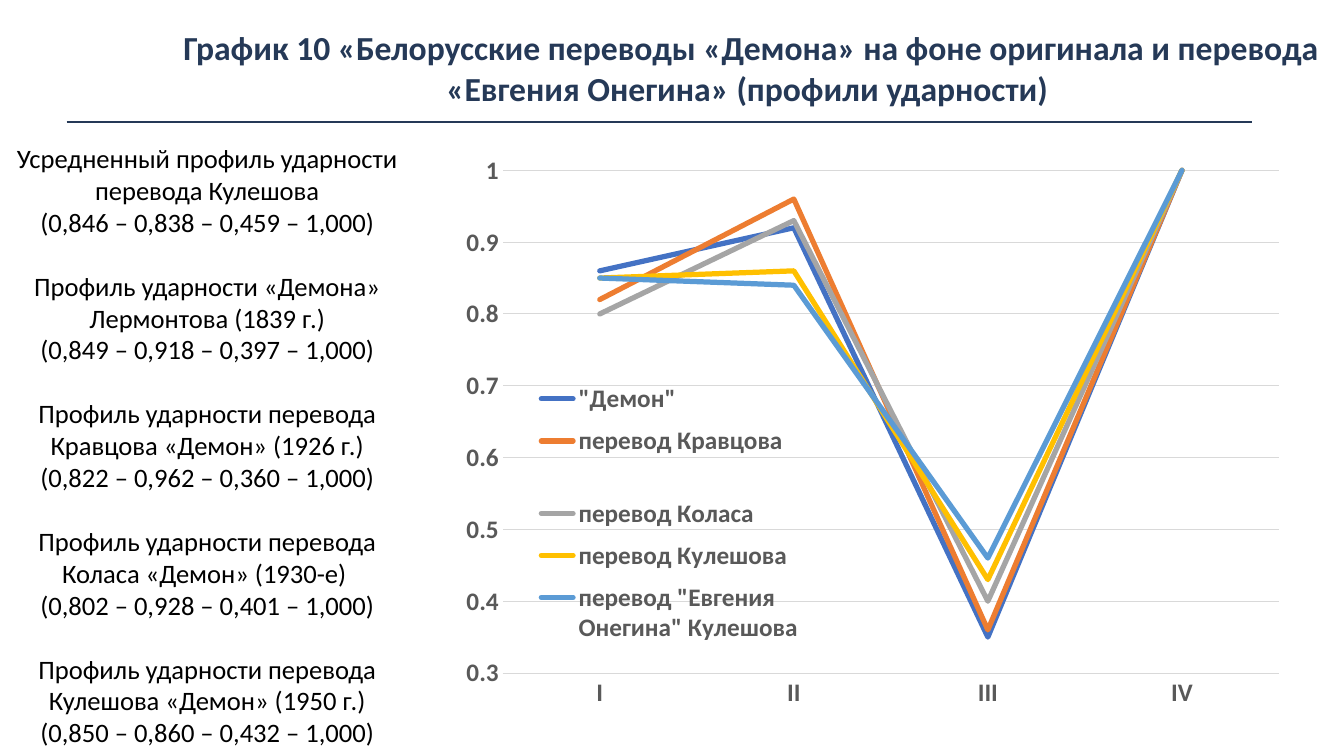
from lxml import etree
from pptx import Presentation
from pptx.chart.data import CategoryChartData
from pptx.dml.color import RGBColor
from pptx.enum.chart import XL_CHART_TYPE as ChartType
from pptx.enum.chart import XL_LEGEND_POSITION as LegendPosition
from pptx.enum.chart import XL_TICK_MARK as TickMark
from pptx.enum.shapes import MSO_CONNECTOR as Connector
from pptx.enum.text import MSO_ANCHOR as Anchor
from pptx.enum.text import MSO_AUTO_SIZE as AutoSize
from pptx.enum.text import PP_ALIGN as Align
from pptx.oxml.ns import qn
from pptx.util import Inches, Pt

FONT = "Calibri"
NAVY = "253957"
BLACK = "000000"
GRAY = "595959"
GRID = "D9D9D9"

TITLE = ("График 10 «Белорусские переводы «Демона» на фоне оригинала "
         "и перевода «Евгения Онегина» (профили ударности) ")

PROFILES = [
    ("Усредненный профиль ударности перевода Кулешова",
     "(0,846 – 0,838 – 0,459 – 1,000)"),
    ("Профиль ударности «Демона» Лермонтова (1839 г.)",
     "(0,849 – 0,918 – 0,397 – 1,000)"),
    ("Профиль ударности перевода Кравцова «Демон» (1926 г.)",
     "(0,822 – 0,962 – 0,360 – 1,000)"),
    ("Профиль ударности перевода Коласа «Демон» (1930-е) ",
     "(0,802 – 0,928 – 0,401 – 1,000)"),
    ("Профиль ударности перевода Кулешова «Демон» (1950 г.)",
     "(0,850 – 0,860 – 0,432 – 1,000)"),
]

SERIES = [
    ('"Демон"', (0.86, 0.92, 0.35, 1), "4472C4"),
    ("перевод Кравцова\n", (0.82, 0.96, 0.36, 1), "ED7D31"),
    ("перевод Коласа", (0.8, 0.93, 0.4, 1), "A5A5A5"),
    ("перевод Кулешова", (0.85, 0.86, 0.43, 1), "FFC000"),
    ('перевод "Евгения Онегина" Кулешова', (0.85, 0.84, 0.46, 1), "5B9BD5"),
]


def color(value):
    return RGBColor.from_string(value)


def apply(target, values):
    for name, value in values.items():
        setattr(target, name, value)


class SlideBuilder:
    def __init__(self, deck):
        self.page = deck.slides.add_slide(deck.slide_layouts[1])

    def style_font(self, font, size, ink, bold=False):
        apply(font, {"name": FONT, "size": Pt(size), "bold": bold})
        font.color.rgb = color(ink)

    def style_line(self, line, ink, width):
        line.color.rgb = color(ink)
        line.width = Pt(width)

    def text(self, box, place, rows, size, ink, bold, anchor, inset):
        left, top, width, height = map(Inches, place)
        apply(box, {"left": left, "top": top, "width": width, "height": height})
        frame = box.text_frame
        apply(frame, {"word_wrap": True, "auto_size": AutoSize.NONE,
                      "vertical_anchor": anchor})
        sides = ("margin_left", "margin_top", "margin_right", "margin_bottom")
        apply(frame, dict.fromkeys(sides, Inches(inset)))
        for index, (words, gap) in enumerate(rows):
            para = frame.add_paragraph() if index else frame.paragraphs[0]
            apply(para, {"alignment": Align.CENTER, "space_before": Pt(gap),
                         "space_after": Pt(0)})
            settings = para._p.get_or_add_pPr()
            settings.set("marL", "0")
            settings.set("indent", "0")
            etree.SubElement(settings, qn("a:buNone"))
            span = para.add_run()
            span.text = words
            self.style_font(span.font, size, ink, bold)

    def rule(self, left, right, top, ink, width):
        line = self.page.shapes.add_connector(
            Connector.STRAIGHT, Inches(left), Inches(top), Inches(right), Inches(top))
        self.style_line(line.line, ink, width)
        etree.SubElement(line._element.spPr, qn("a:effectLst"))

    def manual_layout(self, parent, position, place, inner=False):
        for old in parent.findall(qn("c:layout")):
            parent.remove(old)
        layout = etree.Element(qn("c:layout"))
        manual = etree.SubElement(layout, qn("c:manualLayout"))
        entries = [("layoutTarget", "inner")] if inner else []
        entries += [("xMode", "edge"), ("yMode", "edge")]
        entries += zip("xywh", map(str, place))
        for tag, value in entries:
            etree.SubElement(manual, qn(f"c:{tag}")).set("val", value)
        parent.insert(position, layout)

    def axis(self, axis):
        apply(axis, {"major_tick_mark": TickMark.NONE, "minor_tick_mark": TickMark.NONE})
        self.style_font(axis.tick_labels.font, 18, GRAY, True)

    def line_chart(self, place, categories, series):
        data = CategoryChartData()
        data.categories = categories
        for name, values, ink in series:
            data.add_series(name, values)
        chart = self.page.shapes.add_chart(
            ChartType.LINE, *map(Inches, place), data).chart
        apply(chart, {"has_title": False, "has_legend": True})
        self.style_font(chart.font, 10, BLACK)
        chart.plots[0].vary_by_categories = False
        for line, (name, values, ink) in zip(chart.plots[0].series, series):
            line.smooth = False
            self.style_line(line.format.line, ink, 3.75)
            line._element.find(f"{qn('c:spPr')}/{qn('a:ln')}").set("cap", "rnd")

        self.axis(chart.category_axis)
        self.style_line(chart.category_axis.format.line, GRID, 0.75)
        scale = chart.value_axis
        self.axis(scale)
        apply(scale, {"minimum_scale": 0.3, "maximum_scale": 1, "major_unit": 0.1,
                      "has_major_gridlines": True})
        self.style_line(scale.major_gridlines.format.line, GRID, 0.75)
        scale.format.line.fill.background()

        legend = chart.legend
        apply(legend, {"position": LegendPosition.BOTTOM, "include_in_layout": False})
        self.style_font(legend.font, 18, GRAY, True)
        self.manual_layout(legend._element, 1, (0.09, 0.35, 0.33, 0.43))
        plot_area = chart._chartSpace.chart.plotArea
        self.manual_layout(plot_area, 0, (0.065, 0.043, 0.884, 0.765), inner=True)


def main():
    deck = Presentation()
    apply(deck, {"slide_width": Inches(13.33), "slide_height": Inches(7.5)})
    slide = SlideBuilder(deck)
    title, body = slide.page.placeholders

    rows = []
    for heading, numbers in PROFILES:
        rows += [(heading, 22.8 if rows else 0), (numbers, 0)]
    slide.text(body, (0, 1.3, 4.11, 6.23), rows, 19, BLACK, False, Anchor.MIDDLE, 0.08)
    slide.line_chart((4.42, 1.41, 8.71, 6.52), ("I", "II", "III", "IV"), SERIES)
    slide.rule(0.66, 12.42, 1.21, NAVY, 1)
    slide.text(title, (1.57, 0.23, 11.76, 0.72), [(TITLE, 0)], 24, NAVY, True,
               Anchor.TOP, 0.04)
    deck.save("out.pptx")


if __name__ == "__main__":
    main()
